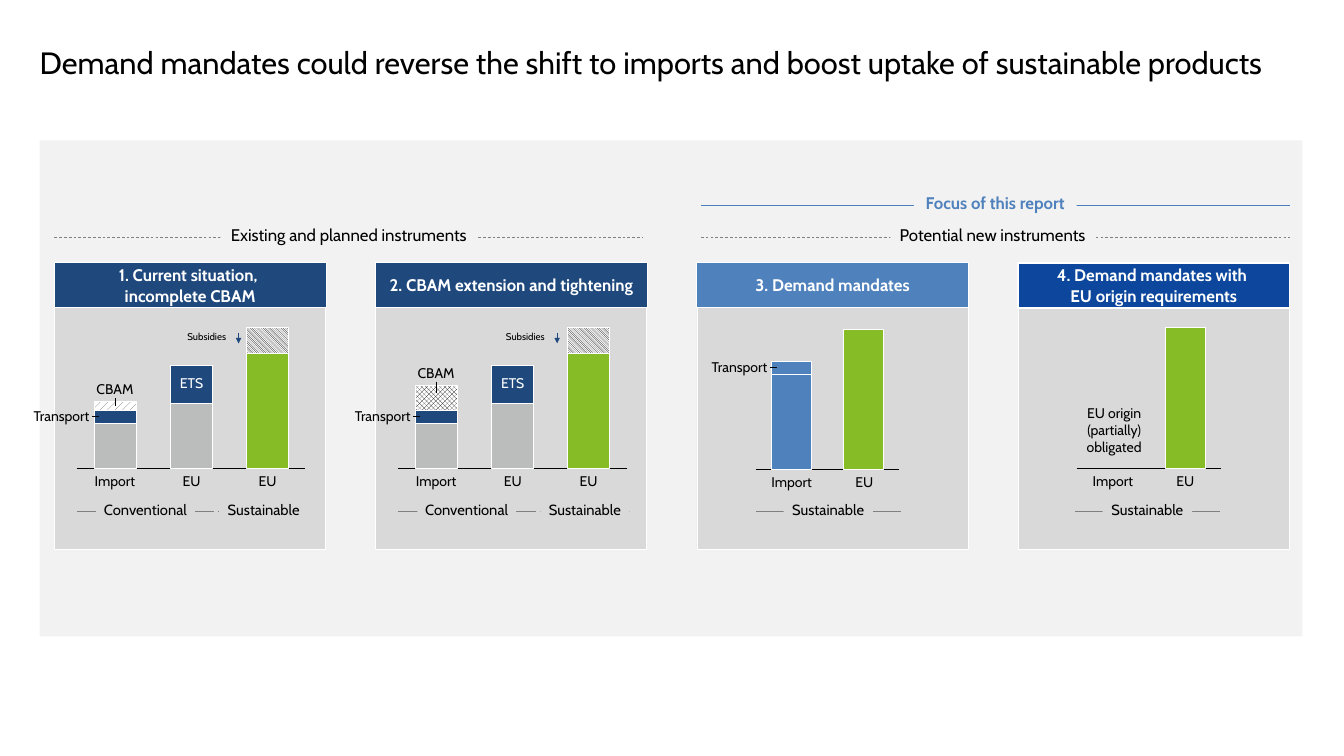
from dataclasses import dataclass
from typing import NamedTuple, Optional, Union

from lxml.etree import SubElement
from pptx import Presentation
from pptx.chart.data import CategoryChartData
from pptx.dml.color import RGBColor
from pptx.enum.chart import XL_CHART_TYPE, XL_TICK_LABEL_POSITION, XL_TICK_MARK
from pptx.enum.dml import MSO_LINE, MSO_PATTERN
from pptx.enum.shapes import MSO_CONNECTOR, MSO_SHAPE
from pptx.enum.text import MSO_ANCHOR, PP_ALIGN
from pptx.oxml.ns import qn
from pptx.util import Inches, Pt


@dataclass(frozen=True)
class Theme:
    """Colours, fonts and type sizes of the slide."""
    black: str = "000000"
    white: str = "FFFFFF"
    pale: str = "F2F2F2"
    panel: str = "D9D9D9"
    rule: str = "808080"
    bar: str = "BBBCBC"
    green: str = "86BC25"
    navy: str = "1F497D"
    blue: str = "4F81BD"
    royal: str = "0C479D"
    focus: str = "4B7EBC"
    font: str = "Cabin"
    plain: str = "Calibri"
    title: float = 33
    head: float = 18
    group: float = 15.8
    label: float = 15
    tiny: float = 10.5
    chart: float = 10


class Box(NamedTuple):
    """A place on the grid, in columns and rows."""
    x: float
    y: float
    w: float
    h: float


Fill = Union[str, MSO_PATTERN]


class Layer(NamedTuple):
    """One stacked series with its own fill and the fills of single bars."""
    vals: tuple
    fill: Fill
    spots: dict = {}


class Panel(NamedTuple):
    """One scenario: heading, chart and where its parts sit."""
    head: str
    fill: str
    layers: tuple
    edge: float = 0.75
    top: float = 47.4
    peak: int = 100
    cap: Optional[float] = None
    stem: float = 0
    shift: float = 0


COLS, ROWS, STEP, LEFT = 200, 112.5, 47.8, 8.1
T = Theme()
MID, RIGHT = PP_ALIGN.CENTER, PP_ALIGN.RIGHT
HATCH = MSO_PATTERN.LIGHT_DOWNWARD_DIAGONAL
deck = Presentation()
deck.slide_width, deck.slide_height = Inches(20), Inches(11.25)
slide = deck.slides.add_slide(deck.slide_layouts[6])


def col(n: float) -> int:
    """Turn columns into a length."""
    return round(deck.slide_width * n / COLS)


def row(n: float) -> int:
    """Turn rows into a length."""
    return round(deck.slide_height * n / ROWS)


def place(box: Box) -> tuple:
    """Turn a grid place into lengths."""
    return col(box.x), row(box.y), col(box.w), row(box.h)


def paint(fill, tone: Fill) -> None:
    """Fill with a colour or a black and white pattern."""
    if isinstance(tone, str):
        fill.solid()
        fill.fore_color.rgb = RGBColor.from_string(tone)
    else:
        fill.patterned()
        fill.pattern = tone
        fill.fore_color.rgb = RGBColor.from_string(T.black)
        fill.back_color.rgb = RGBColor.from_string(T.white)


def stroke(line, tone: str, width: float) -> None:
    """Colour a line and set its width."""
    paint(line.fill, tone)
    line.width = Pt(width)


def rect(box: Box, tone: str, edge: float = 0):
    """Draw a plain box with an optional white edge."""
    shape = slide.shapes.add_shape(MSO_SHAPE.RECTANGLE, *place(box))
    shape.shadow.inherit = False
    paint(shape.fill, tone)
    if edge:
        stroke(shape.line, T.white, edge)
    else:
        shape.line.fill.background()
    return shape


def write(text: str, box: Box, *, shape=None, size: float = T.label, tone: str = T.black,
          bold: bool = False, align=MID, anchor=MSO_ANCHOR.TOP, inset: tuple = (0, 0),
          wrap: bool = False, space: Optional[float] = None) -> None:
    """Set text in a shape, or in a new text box."""
    frame = (shape or slide.shapes.add_textbox(*place(box))).text_frame
    frame.word_wrap, frame.vertical_anchor = wrap, anchor
    frame.margin_left = frame.margin_right = col(inset[0])
    frame.margin_top = frame.margin_bottom = row(inset[1])
    para = frame.paragraphs[0]
    para.text, para.alignment = text, align
    if space:
        para.line_spacing = space
    for run in para.runs:
        run.font.name, run.font.size, run.font.bold = T.font, Pt(size), bold
        run.font.color.rgb = RGBColor.from_string(tone)


def rule(x: float, y: float, w: float, h: float = 0, tone: str = T.rule,
         width: float = 0.75, dash: bool = False, arrow: bool = False) -> None:
    """Draw a straight line, dashed or with an arrowhead if asked."""
    line = slide.shapes.add_connector(MSO_CONNECTOR.STRAIGHT, col(x), row(y), col(x + w), row(y + h))
    stroke(line.line, tone, width)
    if dash:
        line.line.dash_style = MSO_LINE.DASH
    if arrow:
        SubElement(line.line._get_or_add_ln(), qn("a:tailEnd"), type="triangle")
    SubElement(line._element.spPr, qn("a:effectLst"))


def tag(text: str, box: Box, tone: str, size: float, ink: str = T.black, bold: bool = False) -> None:
    """Lay a filled label over a line."""
    write(text, box, shape=rect(box, tone), size=size, tone=ink, bold=bold, inset=(1, 0.5))


def plot(box: Box, layers: tuple, peak: int) -> None:
    """Draw a stacked column chart."""
    count = len(layers[0].vals)
    data = CategoryChartData()
    data.categories = [str(n + 1) for n in range(count)]
    for n, layer in enumerate(layers, 1):
        data.add_series(f"Series {n}", layer.vals)
    chart = slide.shapes.add_chart(XL_CHART_TYPE.COLUMN_STACKED, *place(box), data).chart
    chart.has_legend = chart.has_title = False
    chart.font.name, chart.font.size = T.plain, Pt(T.chart)
    chart.font.color.rgb = RGBColor.from_string(T.black)
    bars = chart.plots[0]
    bars.gap_width, bars.overlap, bars.vary_by_categories = 80, 100, False
    for series, layer in zip(bars.series, layers):
        series.invert_if_negative = False
        for part, tone in [(series, layer.fill)] + [(series.points[k], v) for k, v in layer.spots.items()]:
            paint(part.format.fill, tone)
            stroke(part.format.line, T.white, 0.25)
    base, scale = chart.category_axis, chart.value_axis
    base.tick_label_position = XL_TICK_LABEL_POSITION.NONE
    base.major_tick_mark = base.minor_tick_mark = XL_TICK_MARK.NONE
    stroke(base.format.line, T.black, 0.75)
    scale.minimum_scale, scale.maximum_scale = 0, peak
    scale.has_major_gridlines = scale.visible = False
    area = chart._chartSpace.chart.plotArea
    for old in area.findall(qn("c:layout")):
        area.remove(old)
    frame = SubElement(area, qn("c:layout"))
    area.insert(0, frame)
    spot = SubElement(frame, qn("c:manualLayout"))
    side = 0.037 if count == 3 else 0.056
    for key, val in dict(layoutTarget="inner", xMode="edge", yMode="edge", x=side, y=0.057,
                         w=1 - 2 * side, h=0.885).items():
        SubElement(spot, qn(f"c:{key}"), val=str(val))


def freight(x: float, y: float) -> None:
    """Label the transport part of an import bar."""
    rule(x + 9.4, y, 1, tone=T.black, width=0.5)
    write("Transport", Box(x, y - 1.1, 9.3, 2.2), align=RIGHT, anchor=MSO_ANCHOR.MIDDLE,
          inset=(0.3, 0), space=0.9)


def group(text: str, x: float, w: float, mid: float, wide: float) -> None:
    """Draw a line under the bars with its label."""
    rule(x, 76.1, w)
    tag(text, Box(mid, 74, wide, 3.7), T.panel, T.group)


def present(x: float, p: Panel) -> None:
    """Label the three bars of an existing scheme."""
    rule(x + 9, p.cap + 2.2, 0, p.stem, tone=T.black, width=0.5)
    freight(x - 3.8, 62)
    write("CBAM", Box(x + 5.9, p.cap, 6.2, 2.2), anchor=MSO_ANCHOR.BOTTOM, inset=(0.3, 0), space=0.9)
    write("ETS", Box(x + 17.4, 56.1, 6, 2.2), tone=T.white, anchor=MSO_ANCHOR.MIDDLE,
          inset=(0.3, 0), space=0.9)
    rule(x + 27.4 + p.shift, 49.5, 0, 1.6, tone=T.navy, arrow=True)
    write("Subsidies", Box(x + 18.8 + p.shift, 48.7, 8.2, 2.8), size=T.tiny,
          align=PP_ALIGN.LEFT, inset=(1, 0.5))
    group("Conventional", x + 3.3, 20.5, x + 6.2, 14.7)
    group("Sustainable", x + 24.4, 13.4, x + 24.5, 13.3)


def show(x: float, p: Panel) -> None:
    """Draw one scenario panel."""
    rect(Box(x, 40.3, 40.35, 41.5), T.panel, 0.75)
    head = Box(x, 39.1, 40.4, 6.7)
    write(p.head, head, shape=rect(head, p.fill, p.edge), size=T.head, tone=T.white, bold=True,
          anchor=MSO_ANCHOR.MIDDLE, wrap=True)
    three = len(p.layers[0].vals) == 3
    plot(Box(x + (2 if three else 7.4), p.top, 36.7 if three else 24.1, 23.6), p.layers, p.peak)
    first, marks = (5.9, (19, 30.3)) if three else (11, (23.5,))
    base = p.top + 22.9
    write("Import", Box(x + first, base, 6.2, 2.5))
    for mark in marks:
        write("EU", Box(x + mark, base, 2.8, 2.5))
    if three:
        present(x, p)
    else:
        group("Sustainable", x + 8.8 + p.shift, 21.6, x + 12.9 + p.shift, 13.3)


def stack(levy: int, tone: Fill) -> tuple:
    """Give the layers of an existing scheme for one import levy."""
    return (Layer((39, 56, 100), T.bar, {2: T.green}), Layer((0, 33, 22), T.navy, {2: HATCH}),
            Layer((11, 0, 0), T.navy), Layer((levy, 0, None), tone))


PANELS = (
    Panel("1. Current situation, \vincomplete CBAM", T.navy, stack(8, MSO_PATTERN.PERCENT_10),
          peak=122, cap=57, stem=1.2),
    Panel("2. CBAM extension and tightening", T.navy, stack(22, MSO_PATTERN.PERCENT_50),
          peak=122, cap=54.6, stem=1.7, shift=-0.4),
    Panel("3. Demand mandates", T.blue,
          (Layer((68, 100), T.green, {0: T.blue}), Layer((9, 0), T.blue)), top=47.6),
    Panel("4. Demand mandates with \vEU origin requirements", T.royal,
          (Layer((None, 100), T.green), Layer((None, 0), HATCH)), edge=2, shift=-0.3),
)


def main() -> None:
    """Build the slide and save it."""
    write("Demand mandates could reverse the shift to imports and boost uptake of sustainable products",
          Box(5.9, 6.5, 187.9, 8.3), size=T.title, align=PP_ALIGN.LEFT, wrap=True)
    rect(Box(5.9, 20.9, 187.9, 73.8), T.pale)
    for n, panel in enumerate(PANELS):
        show(LEFT + n * STEP, panel)
    freight(LEFT + 2 * STEP + 1.5, 54.7)
    write("EU origin (partially) obligated", Box(LEFT + 3 * STEP + 8.5, 59.7, 11.6, 8.6),
          inset=(1, 0.5), wrap=True)
    for x in (8.1, 104.3):
        rule(x, 35.3, 87.6, dash=True)
    rule(104.3, 30.5, 87.6, tone=T.focus)
    tag("Existing and planned instruments", Box(32.8, 33, 38.2, 4), T.pale, T.head)
    tag("Potential new instruments", Box(132.5, 33, 30.4, 4), T.pale, T.head)
    tag("Focus of this report", Box(136, 28.2, 24.2, 4), T.pale, T.head, T.blue, True)
    deck.save("out.pptx")


if __name__ == "__main__":
    main()
